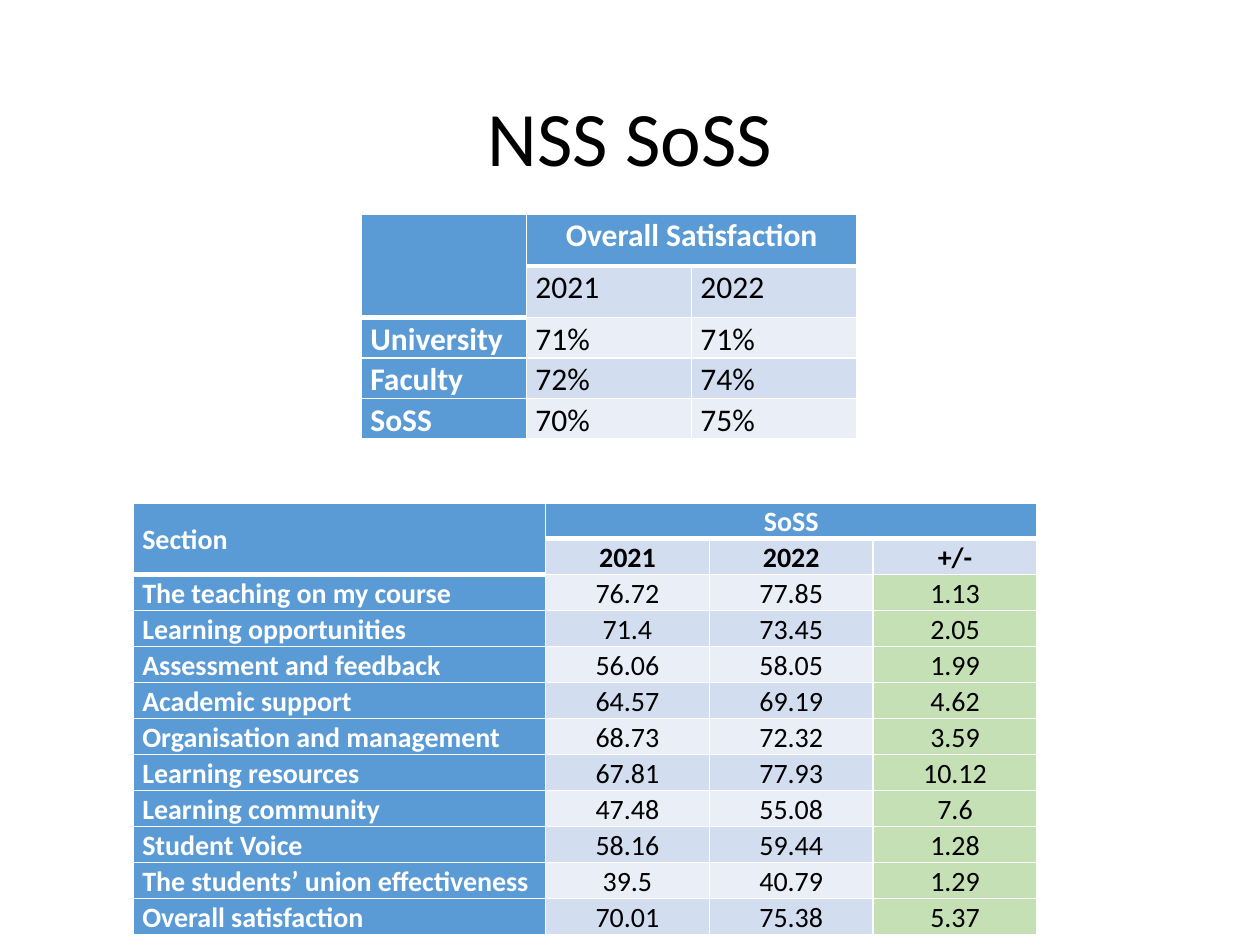
"""Build the NSS SoSS slide: a title and two survey result tables."""
from lxml import etree
from pptx import Presentation, util as u
from pptx.dml.color import RGBColor
from pptx.enum import text
from pptx.oxml import ns


def paint(fill, color):
    fill.solid()
    fill.fore_color.rgb = RGBColor.from_string(color)


def edge(tc_pr, side, width):
    ln = etree.SubElement(tc_pr, ns.qn(f"a:ln{side}"), w=str(u.Pt(width)))
    solid = etree.SubElement(ln, ns.qn("a:solidFill"))
    etree.SubElement(solid, ns.qn("a:srgbClr"), val="FFFFFF")


BLUE, GREEN, WHITE, BLACK = "5B9BD5", "C5E0B4", "FFFFFF", "000000"
BANDS = ["EAEFF7", "D2DEEF"]
TOP, BOTTOM = text.MSO_ANCHOR.TOP, text.MSO_ANCHOR.BOTTOM
LEFT, CENTER = text.PP_ALIGN.LEFT, text.PP_ALIGN.CENTER

sections = [
    ["Section", "SoSS", "", ""],
    ["", "2021", "2022", "+/-"],
    ["The teaching on my course", "76.72", "77.85", "1.13"],
    ["Learning opportunities", "71.4", "73.45", "2.05"],
    ["Assessment and feedback", "56.06", "58.05", "1.99"],
    ["Academic support", "64.57", "69.19", "4.62"],
    ["Organisation and management", "68.73", "72.32", "3.59"],
    ["Learning resources", "67.81", "77.93", "10.12"],
    ["Learning community", "47.48", "55.08", "7.6"],
    ["Student Voice", "58.16", "59.44", "1.28"],
    ["The students’ union effectiveness", "39.5", "40.79", "1.29"],
    ["Overall satisfaction", "70.01", "75.38", "5.37"],
]
overall = [
    ["", "Overall Satisfaction", ""],
    ["", "2021", "2022"],
    ["University", "71%", "71%"],
    ["Faculty", "72%", "74%"],
    ["SoSS", "70%", "75%"],
]
tables = [
    (sections, 1.06, 3.99, [3.27] + [1.3] * 3, [0.27] * 12, 16, BOTTOM, CENTER, 8),
    (overall, 2.87, 1.7, [1.31] * 3, [0.41] * 2 + [0.28] * 3, 18, TOP, LEFT, 0),
]

prs = Presentation()
prs.slide_width, prs.slide_height = u.Inches(10), u.Inches(7.5)
s = prs.slides.add_slide(prs.slide_layouts[6])
paint(s.background.fill, WHITE)

sp = s.shapes.add_textbox(u.Inches(0.69), u.Inches(0.4), u.Inches(8.62), u.Inches(1.45))
tf = sp.text_frame
tf.word_wrap = True
tf.vertical_anchor = text.MSO_ANCHOR.MIDDLE
tf.text = "NSS SoSS"
p = tf.paragraphs[0]
p.alignment, p.line_spacing = CENTER, 0.9
r = p.runs[0]
r.font.name, r.font.size = "Calibri", u.Pt(44)
r.font.color.rgb = RGBColor.from_string(BLACK)

for rows, x, y, widths, heights, size, anchor, align, after in tables:
    box = [u.Inches(v) for v in (x, y, sum(widths), sum(heights))]
    tbl = s.shapes.add_table(len(rows), len(widths), *box).table
    for col, width in zip(tbl.columns, widths):
        col.width = u.Inches(width)
    for row, height in zip(tbl.rows, heights):
        row.height = u.Inches(height)
    tbl.cell(0, 0).merge(tbl.cell(1, 0))
    tbl.cell(0, 1).merge(tbl.cell(0, len(widths) - 1))

    for i, row in enumerate(rows):
        for j, value in enumerate(row):
            cell = tbl.cell(i, j)
            header = i == 0 or j == 0
            head_end = 1 if j == 0 else 0
            tc_pr = cell._tc.get_or_add_tcPr()
            edge(tc_pr, "L", 1)
            edge(tc_pr, "R", 1)
            edge(tc_pr, "T", 3 if i == head_end + 1 else 1)
            edge(tc_pr, "B", 3 if i in (0, head_end) else 1)
            change = j == 3 and i > 1
            paint(cell.fill, BLUE if header else GREEN if change else BANDS[i % 2])
            cell.margin_left = cell.margin_right = u.Inches(0.07)
            cell.margin_top = cell.margin_bottom = 0
            middle = rows is sections and i == j == 0
            cell.vertical_anchor = text.MSO_ANCHOR.MIDDLE if middle else anchor
            tf = cell.text_frame
            tf.text = value
            p = tf.paragraphs[0]
            p.alignment = LEFT if j == 0 else CENTER if i == 0 else align
            p.line_spacing, p.space_after = 1.07, u.Pt(after)
            p.font.size = u.Pt(size)
            for r in p.runs:
                r.font.name, r.font.size = "Calibri", u.Pt(size)
                r.font.bold = header or (i == 1 and rows is sections)
                r.font.color.rgb = RGBColor.from_string(WHITE if header else BLACK)

prs.save("out.pptx")
